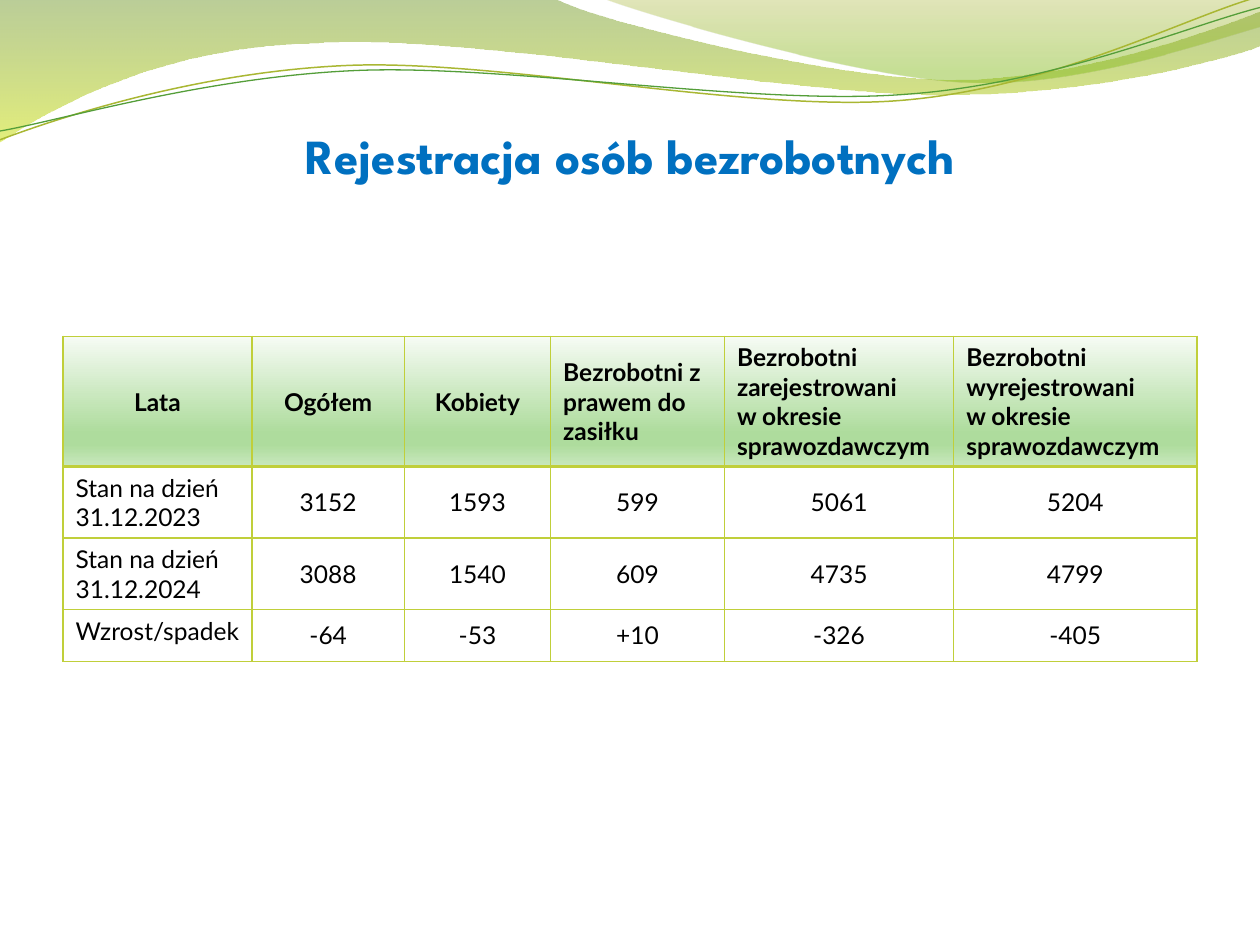
import math

from pptx import Presentation
from pptx import util as u
from pptx.dml.color import RGBColor
from pptx.enum import text
from pptx.oxml import parse_xml
from pptx.oxml.ns import nsdecls

GREEN_LINE = "C0CF3A"
HEADER_STOPS = [(0, "F6FBF4", 100), (74, "AEDC9D", 100),
                (83, "AEDC9D", 100), (100, "C9E8BE", 100)]


def gradient(properties, stops):
    """Swap the noFill of a shape or cell for a top-to-bottom gradient of (position, colour, opacity)."""
    stop_xml = "".join(
        f'<a:gs pos="{position * 1000}"><a:srgbClr val="{color}">'
        f'<a:alpha val="{opacity * 1000}"/></a:srgbClr></a:gs>'
        for position, color, opacity in stops)
    fill = parse_xml(f'<a:gradFill {nsdecls("a")} rotWithShape="1"><a:gsLst>{stop_xml}</a:gsLst>'
                     '<a:lin ang="5400000" scaled="0"/></a:gradFill>')
    properties.replace(properties.find(".//{*}noFill"), fill)


def format_runs(paragraphs, size, font, color, bold):
    for paragraph in paragraphs:
        for run in paragraph.runs:
            run.font.size = u.Pt(size)
            run.font.name = font
            run.font.bold = bold
            run.font.color.rgb = RGBColor.from_string(color)


presentation = Presentation()
presentation.slide_width, presentation.slide_height = u.Inches(10), u.Inches(7.5)
width, height = presentation.slide_width, presentation.slide_height
slide = presentation.slides.add_slide(presentation.slide_layouts[5])

# Waves: a start point, then lines (x, y) and Bezier curves (two controls, end), in inches;
# bands have gradient stops, strokes a colour and weight; then tilt and its centre
waves = [
    ([(0, 0), (4.4, -0.01), (4.75, 0.17, 6.63, 0.63, 7.58, 0.63),
      (8.53, 0.63, 9.58, 0.26, 10, 0.09), (10.01, 0.36),
      (9.83, 0.44, 8.69, 0.76, 7.46, 0.75), (6.22, 0.75, 3.81, 0.28, 2.57, 0.34),
      (1.29, 0.36, 0.46, 0.83, -0.01, 1.13)],
     [(0, "69921C", 45), (100, "CCE10F", 55)], 0, (0, 0)),
    ([(4.79, -0.01), (5.09, 0.11, 6.82, 0.62, 7.68, 0.65),
      (8.55, 0.69, 9.61, 0.32, 10, 0.21), (10, 0)],
     [(0, "9BAA1A", 30), (80, "81BA16", 45)], 0, (0, 0)),
    ([(0, 1.11), (0.48, 0.93, 1.57, 0.57, 2.76, 0.52),
      (3.95, 0.47, 5.92, 0.89, 7.12, 0.8), (8.33, 0.71, 9.38, 0.15, 9.97, -0.02)],
     ("A9B733", 0.85), -2.7, (4.99, 0.58)),
    ([(0, 1.04), (0.47, 0.96, 1.63, 0.61, 2.83, 0.56),
      (4.02, 0.51, 5.97, 0.84, 7.17, 0.75), (8.36, 0.67, 9.41, 0.21, 10, 0.06)],
     ("549E39", 0.75), -2.7, (5, 0.59)),
]
for outline, style, tilt, (center_x, center_y) in waves:
    closed = isinstance(style, list)
    cosine, sine = math.cos(math.radians(tilt)), math.sin(math.radians(tilt))
    points = []
    for segment in outline:
        for x, y in zip(segment[::2], segment[1::2]):
            dx, dy = x - center_x, y - center_y
            points.append((u.Inches(center_x + dx * cosine + dy * sine),
                           u.Inches(center_y - dx * sine + dy * cosine)))
    builder = slide.shapes.build_freeform(*points[0])
    builder.add_line_segments(points[1:], close=closed)
    wave = builder.convert_to_shape()
    wave.rotation = tilt % 360
    wave.shadow.inherit = False

    # Join each run of three line segments that stands for one curve
    lines = iter(wave._element.spPr.findall(".//{*}lnTo"))
    for segment in outline[1:]:
        first = next(lines)
        if len(segment) == 6:
            curve = parse_xml(f'<a:cubicBezTo {nsdecls("a")}/>')
            first.addprevious(curve)
            for line in (first, next(lines), next(lines)):
                curve.append(line[0])
                line.getparent().remove(line)

    wave.fill.background()
    if closed:
        gradient(wave._element.spPr, style)
        wave.line.fill.background()
    else:
        color, weight = style
        wave.line.color.rgb = RGBColor.from_string(color)
        wave.line.width = u.Pt(weight)

# Title, in front of the waves
title = slide.shapes.title
slide.shapes._spTree.append(title._element)
title.left, title.top = int(width * 0.05), int(height * 0.028)
title.width, title.height = int(width * 0.9), u.Inches(1.25)
frame = title.text_frame
frame.text = "Rejestracja osób bezrobotnych"
frame.vertical_anchor = text.MSO_ANCHOR.BOTTOM
frame.margin_left = frame.margin_right = frame.margin_bottom = 0
frame.margin_top = u.Inches(0.05)
frame.paragraphs[0].alignment = text.PP_ALIGN.CENTER
format_runs(frame.paragraphs, 28, "League Spartan", "0070C0", True)

# Table
rows = [
    ["Lata", "Ogółem", "Kobiety", "Bezrobotni z prawem do zasiłku",
     "Bezrobotni zarejestrowani\nw okresie sprawozdawczym",
     "Bezrobotni wyrejestrowani\nw okresie sprawozdawczym"],
    ["Stan na dzień 31.12.2023", "3152", "1593", "599", "5061", "5204"],
    ["Stan na dzień 31.12.2024", "3088", "1540", "609", "4735", "4799"],
    ["Wzrost/spadek", "-64", "-53", "+10", "-326", "-405"],
]
column_widths = [1.5, 1.21, 1.16, 1.38, 1.82, 1.93]
table_frame = slide.shapes.add_table(
    len(rows), len(column_widths), int(width * 0.05), u.Inches(2.67),
    int(width * 0.9), u.Inches(2.57))
table = table_frame.table
table.first_row = table.horz_banding = False
for column, column_width in zip(table.columns, column_widths):
    column.width = u.Inches(column_width)
for row in table.rows:
    row.height = u.Inches(0.41)
table_frame.height = u.Inches(2.57)

for r, values in enumerate(rows):
    for c, value in enumerate(values):
        cell = table.cell(r, c)
        header = r == 0
        row_label = c == 0 and not header
        cell.text_frame.text = value
        cell.vertical_anchor = text.MSO_ANCHOR.TOP if row_label else text.MSO_ANCHOR.MIDDLE
        left_aligned = row_label or (header and c > 2)
        for paragraph in cell.text_frame.paragraphs:
            paragraph.alignment = text.PP_ALIGN.LEFT if left_aligned else text.PP_ALIGN.CENTER
        format_runs(cell.text_frame.paragraphs, 14, "Lato", "000000", header)
        cell.fill.background()
        properties = cell._tc.get_or_add_tcPr()
        if header:
            gradient(properties, HEADER_STOPS)
        for index, side in enumerate("LRTB"):
            heavy = (r, side) in ((0, "B"), (1, "T"))
            properties.insert(index, parse_xml(
                f'<a:ln{side} {nsdecls("a")} w="{u.Pt(2 if heavy else 1)}"><a:solidFill>'
                f'<a:srgbClr val="{GREEN_LINE}"/></a:solidFill></a:ln{side}>'))

presentation.save("out.pptx")
